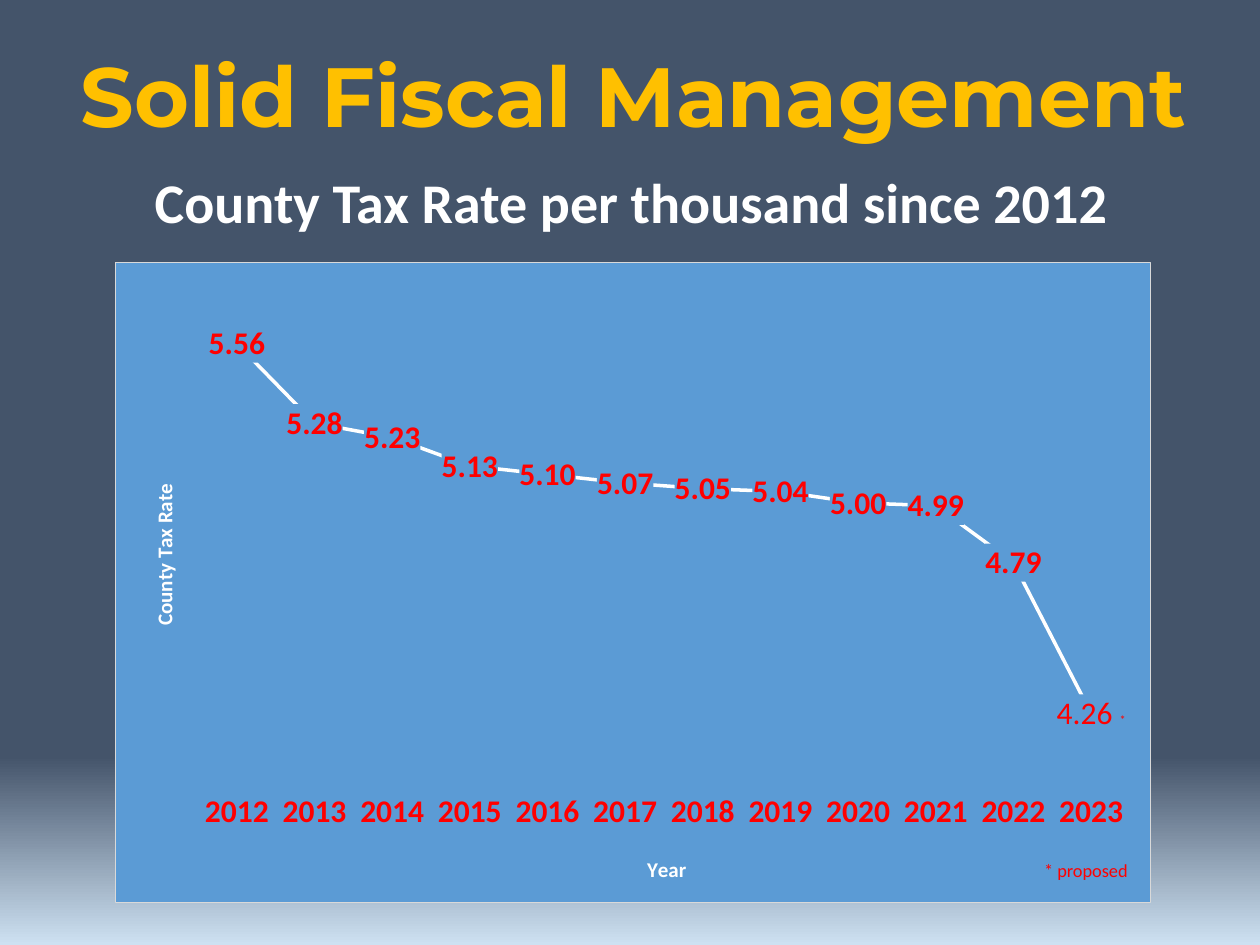
from dataclasses import dataclass

from pptx import Presentation
from pptx.chart.data import CategoryChartData
from pptx.dml.color import RGBColor
from pptx.enum.chart import XL_CHART_TYPE, XL_LABEL_POSITION, XL_TICK_MARK
from pptx.enum.text import MSO_AUTO_SIZE, PP_ALIGN
from pptx.oxml import parse_xml
from pptx.oxml.ns import nsdecls
from pptx.util import Cm, Pt

LINE_CHART = XL_CHART_TYPE.LINE
LABEL_CENTER = XL_LABEL_POSITION.CENTER
NO_TICK = XL_TICK_MARK.NONE
FIT_SHAPE = MSO_AUTO_SIZE.SHAPE_TO_FIT_TEXT
LEFT, CENTER = PP_ALIGN.LEFT, PP_ALIGN.CENTER


@dataclass(frozen=True)
class Theme:
    """Fonts, colours and type sizes of the slide."""
    heading_font: str = "Montserrat"
    body_font: str = "Calibri"
    slate: str = "44546A"
    mist: str = "CEE1F2"
    gold: str = "FFC000"
    white: str = "FFFFFF"
    red: str = "FF0000"
    blue: str = "5B9BD5"
    border: str = "D9D9D9"
    heading: float = 48
    subheading: float = 32
    label: float = 18
    axis_title: float = 12
    note: float = 10.5
    asterisk: float = 7


THEME = Theme()
TAX_RATES = {
    "2023": 4.26, "2022": 4.79, "2021": 4.99, "2020": 5.00,
    "2019": 5.04, "2018": 5.05, "2017": 5.07, "2016": 5.10,
    "2015": 5.13, "2014": 5.23, "2013": 5.28, "2012": 5.56,
}


def style_font(font, size, color, bold=False, name=THEME.body_font):
    """Set the face, size, weight and colour of a font."""
    font.name, font.size, font.bold = name, Pt(size), bold
    font.color.rgb = RGBColor.from_string(color)


def paint_background(page):
    """Fade the page from slate to mist over its lowest fifth."""
    fill = page.background.fill
    fill.gradient()
    fill.gradient_angle = 270
    stops = zip(fill.gradient_stops, (0.8, 1), (THEME.slate, THEME.mist))
    for stop, position, color in stops:
        stop.position = position
        stop.color.rgb = RGBColor.from_string(color)


def add_text(page, text, area, size, color, bold=False,
             name=THEME.body_font, align=LEFT):
    """Add a one-line text box."""
    box = page.shapes.add_textbox(*map(Cm, area))
    frame = box.text_frame
    frame.text = text
    frame.word_wrap = True
    frame.auto_size = FIT_SHAPE
    para = frame.paragraphs[0]
    para.alignment = align
    style_font(para.runs[0].font, size, color, bold, name)


def shape_properties(fill, line=""):
    """Return chart shape properties with a solid fill."""
    return parse_xml(
        f'<c:spPr {nsdecls("c", "a")}><a:solidFill><a:srgbClr val="{fill}"/>'
        f'</a:solidFill>{line}</c:spPr>')


def place(element, x, y, width=None, height=None):
    """Give a chart part a manual layout in fractions of the chart."""
    for layout in element.xpath("c:layout"):
        element.remove(layout)
    settings = {"xMode": "edge", "yMode": "edge", "x": x, "y": y,
                "w": width, "h": height}
    inner = "".join(f'<c:{key} val="{value}"/>'
                    for key, value in settings.items() if value is not None)
    target = '<c:layoutTarget val="inner"/>' if width else ""
    layout = parse_xml(
        f'<c:layout {nsdecls("c")}><c:manualLayout>{target}{inner}'
        '</c:manualLayout></c:layout>')
    element.insert(len(element.xpath("c:tx")), layout)


def title_axis(axis, text):
    """Write a white title on an axis."""
    frame = axis.axis_title.text_frame
    frame.text = text
    style_font(frame.paragraphs[0].runs[0].font, THEME.axis_title,
               THEME.white, True)


def format_axes(chart):
    """Show the years from right to left and hide the value scale."""
    years, rates = chart.category_axis, chart.value_axis
    years.reverse_order = True
    years.major_tick_mark = NO_TICK
    years.format.line.fill.background()
    style_font(years.tick_labels.font, THEME.label, THEME.red, True)
    title_axis(years, "Year")
    rates.minimum_scale, rates.maximum_scale = 4, 5.8
    rates.has_major_gridlines = False
    rates.visible = False
    title_axis(rates, "County Tax Rate")


def format_series(series):
    """Draw the white line with red values centred on its points."""
    series.smooth = False
    series.format.line.color.rgb = RGBColor.from_string(THEME.white)
    series.format.line.width = Pt(2)
    series.marker.style = None
    labels = series.data_labels
    labels.show_value = True
    labels.number_format, labels.number_format_is_linked = "0.00", False
    labels.position = LABEL_CENTER
    style_font(labels.font, THEME.label, THEME.red, True)
    proposed = series.points[0].data_label
    proposed.position = LABEL_CENTER
    para = proposed.text_frame.paragraphs[0]
    for text, size in (("4.26 ", THEME.label), ("*", THEME.asterisk)):
        span = para.add_run()
        span.text = text
        style_font(span.font, size, THEME.red)


def add_rate_chart(page):
    """Add the line chart of tax rates by year."""
    data = CategoryChartData(number_format="0.00")
    data.categories = list(TAX_RATES)
    data.add_series("Series 1", list(TAX_RATES.values()))
    area = map(Cm, (2.31, 5.28, 20.9, 12.93))
    chart = page.shapes.add_chart(LINE_CHART, *area, data).chart
    chart.has_legend = chart.has_title = False
    chart.font.name, chart.font.size = THEME.body_font, Pt(10)
    chart.plots[0].vary_by_categories = False
    format_axes(chart)
    format_series(chart.plots[0].series[0])

    root = chart.element
    border = (f'<a:ln w="9525"><a:solidFill><a:srgbClr val="{THEME.border}"/>'
              '</a:solidFill></a:ln>')
    root.xpath("c:chart")[0].addnext(shape_properties(THEME.blue, border))
    for label in root.xpath(".//c:ser/c:dLbls | .//c:ser/c:dLbls/c:dLbl"):
        follower = label.xpath("c:txPr | c:dLblPos")[0]
        follower.addprevious(shape_properties(THEME.blue))
    place(root.xpath(".//c:plotArea")[0], 0.08, 0.02, 0.9, 0.8)
    place(root.xpath(".//c:catAx/c:title")[0], 0.51, 0.92)
    place(root.xpath(".//c:valAx/c:title")[0], 0.03, 0.34)


def main():
    """Build and save the slide."""
    deck = Presentation()
    deck.slide_width, deck.slide_height = Cm(25.4), Cm(19.05)
    page = deck.slides.add_slide(deck.slide_layouts[6])
    paint_background(page)
    add_text(page, "Solid Fiscal Management", (-0.25, 0.76, 26.04, 2.31),
             THEME.heading, THEME.gold, True, THEME.heading_font, CENTER)
    add_rate_chart(page)
    add_text(page, "* proposed", (20.8, 17.2, 2.39, 0.71),
             THEME.note, THEME.red)
    add_text(page, "County Tax Rate per thousand since 2012",
             (2.87, 3.25, 20.32, 1.63), THEME.subheading, THEME.white, True)
    deck.save("out.pptx")


if __name__ == "__main__":
    main()
